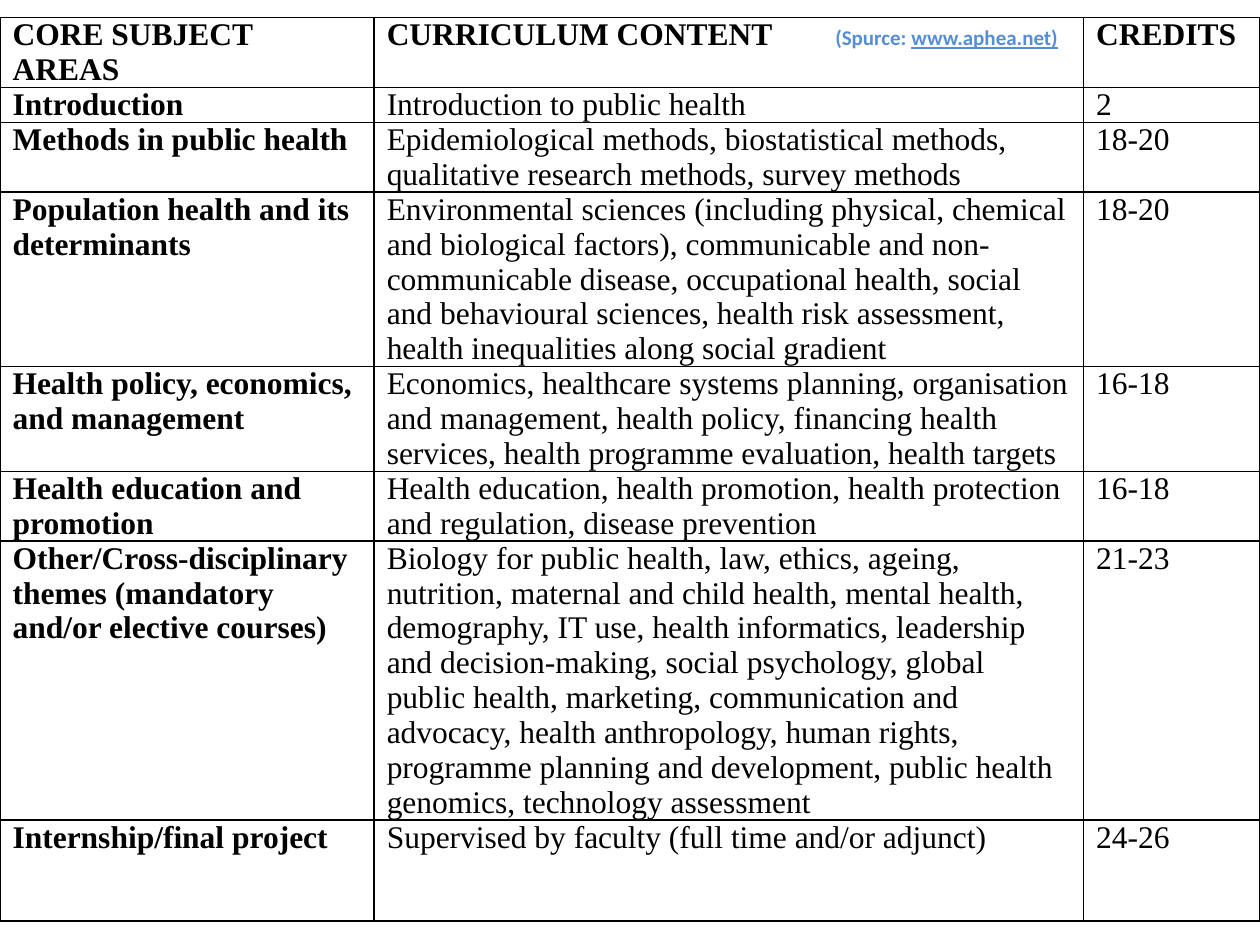
from lxml import etree
from pptx import Presentation
from pptx.dml.color import RGBColor
from pptx.oxml.ns import qn
from pptx.util import Inches, Pt

BLANK_LAYOUT = 6
COLORS = {"text": "000000", "border": "000000", "source": "558ED5"}
BODY_FONT = "Times New Roman"
SOURCE_FONT = "Calibri"

HEADINGS = ["CORE SUBJECT AREAS", "CURRICULUM CONTENT", "CREDITS"]
SUBJECTS = [
    ("Introduction", "Introduction to public health", "2"),
    ("Methods in public health",
     "Epidemiological methods, biostatistical methods, qualitative research "
     "methods, survey methods", "18-20"),
    ("Population health and its determinants",
     "Environmental sciences (including physical, chemical and biological "
     "factors), communicable and non-communicable disease, occupational "
     "health, social and behavioural sciences, health risk assessment, "
     "health inequalities along social gradient", "18-20"),
    ("Health policy, economics, and management",
     "Economics, healthcare systems planning, organisation and management, "
     "health policy, financing health services, health programme "
     "evaluation, health targets", "16-18"),
    ("Health education and promotion",
     "Health education, health promotion, health protection and regulation, "
     "disease prevention", "16-18"),
    ("Other/Cross-disciplinary themes (mandatory and/or elective courses)",
     "Biology for public health, law, ethics, ageing, nutrition, maternal and "
     "child health, mental health, demography, IT use, health informatics, "
     "leadership and decision-making, social psychology, global public "
     "health, marketing, communication and advocacy, health anthropology, "
     "human rights, programme planning and development, public health "
     "genomics, technology assessment", "21-23"),
    ("Internship/final project",
     "Supervised by faculty (full time and/or adjunct)", "24-26"),
]
COLUMN_WIDTHS = [2.97, 5.63, 1.4]
ROW_HEIGHTS = [0.53, 0.27, 0.53, 1.33, 0.8, 0.53, 1.86, 0.8]


def add_borders(cell):
    properties = cell._tc.get_or_add_tcPr()
    for side in ("a:lnL", "a:lnR", "a:lnT", "a:lnB"):
        line = etree.SubElement(properties, qn(side), w=str(Pt(1)))
        fill = etree.SubElement(line, qn("a:solidFill"))
        etree.SubElement(fill, qn("a:srgbClr"), val=COLORS["border"])


def style_font(font, name, size, color, bold):
    font.name = name
    font.size = Pt(size)
    font.color.rgb = RGBColor.from_string(COLORS[color])
    font.bold = bold


prs = Presentation()
prs.slide_width = Inches(10)
prs.slide_height = Inches(7.5)
slide = prs.slides.add_slide(prs.slide_layouts[BLANK_LAYOUT])

# Curriculum table
rows = [HEADINGS, *SUBJECTS]
curriculum = slide.shapes.add_table(
    len(rows), len(HEADINGS), Inches(0), Inches(0.14),
    Inches(sum(COLUMN_WIDTHS)), Inches(sum(ROW_HEIGHTS))).table
curriculum.first_row = True
curriculum.horz_banding = False
for column, width in zip(curriculum.columns, COLUMN_WIDTHS):
    column.width = Inches(width)
for row, height in zip(curriculum.rows, ROW_HEIGHTS):
    row.height = Inches(height)

for row_index, texts in enumerate(rows):
    for column_index, text in enumerate(texts):
        cell = curriculum.cell(row_index, column_index)
        cell.margin_left = cell.margin_right = Inches(0.1)
        cell.margin_top = cell.margin_bottom = Inches(0)
        add_borders(cell)
        cell.fill.background()
        cell.text = text
        if (row_index, column_index) != (0, 1):
            style_font(cell.text_frame.paragraphs[0].font, BODY_FONT, 18,
                       "text", row_index == 0 or column_index == 0)

# Source note beside the content heading, placed by a tab stop
heading = curriculum.cell(0, 1).text_frame.paragraphs[0]
tabs = etree.SubElement(heading._p.get_or_add_pPr(), qn("a:tabLst"))
etree.SubElement(tabs, qn("a:tab"), pos=str(Inches(3.56)), algn="l")
style_font(heading.runs[0].font, BODY_FONT, 18, "text", True)
for text, underlined in (("\t(Spurce: ", False), ("www.aphea.net)", True)):
    source = heading.add_run()
    source.text = text
    style_font(source.font, SOURCE_FONT, 12, "source", True)
    source.font.underline = underlined

prs.save("out.pptx")
